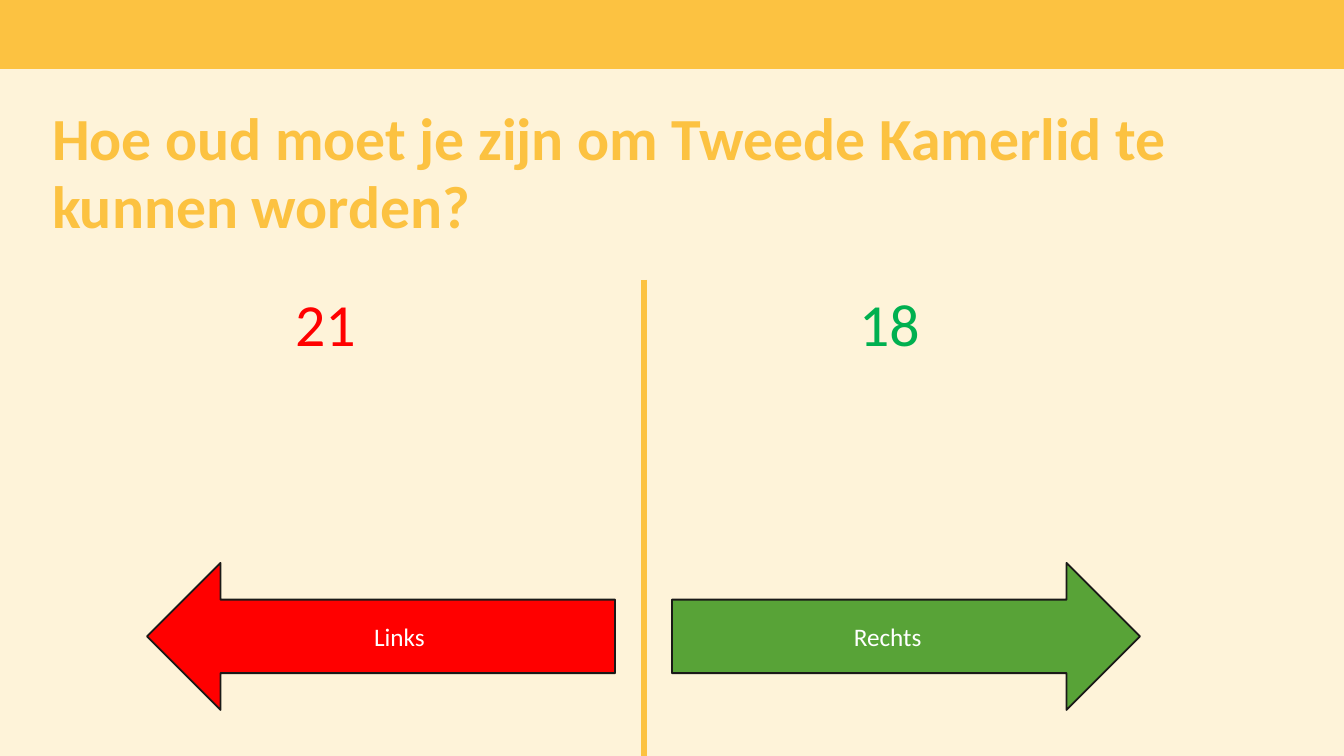
"""Build a quiz slide with a question and two answers, left and right."""
from lxml import etree
from pptx import Presentation, util as u
from pptx.dml.color import RGBColor
from pptx.enum import shapes, text
from pptx.oxml.ns import qn

PX = 914400 / 134.4
WIDTH, HEIGHT = 1344, 756
FONT = "Calibri"
CREAM = RGBColor(0xFE, 0xF3, 0xD9)
YELLOW = RGBColor(0xFC, 0xC2, 0x41)
RED = RGBColor(0xFF, 0x00, 0x00)
GREEN = RGBColor(0x00, 0xB0, 0x50)
LEAF = RGBColor(0x58, 0xA3, 0x37)
INK = RGBColor(0x1A, 0x19, 0x18)
WHITE = RGBColor(0xFF, 0xFF, 0xFF)


def px(*lengths):
    """Turn pixel lengths into EMU."""
    return [u.Emu(round(length * PX)) for length in lengths]


def write(frame, wording, size, color, bold=False, align=text.PP_ALIGN.LEFT):
    """Put one formatted paragraph in a text frame."""
    frame.text = wording
    paragraph = frame.paragraphs[0]
    paragraph.alignment = align
    for run in paragraph.runs:
        run.font.name = FONT
        run.font.size = u.Pt(size)
        run.font.bold = bold
        run.font.color.rgb = color
    return paragraph


def add_band(slide):
    """Draw the band along the top edge."""
    band = slide.shapes.add_shape(
        shapes.MSO_SHAPE.RECTANGLE, *px(0, 0, WIDTH, 69))
    band.shadow.inherit = False
    band.fill.solid()
    band.fill.fore_color.rgb = YELLOW
    band.line.fill.background()


def set_question(slide, wording):
    """Place the question in the title placeholder."""
    question = slide.shapes.title
    question.left, question.top, question.width, question.height = px(
        52, 99, 1292, 132)
    frame = question.text_frame
    frame.margin_left = frame.margin_right = frame.margin_bottom = 0
    frame.margin_top = u.Inches(0.05)
    frame.word_wrap = True
    frame.auto_size = text.MSO_AUTO_SIZE.NONE
    frame.vertical_anchor = text.MSO_ANCHOR.TOP
    write(frame, wording, 32, YELLOW, bold=True).line_spacing = u.Pt(36)


def add_divider(slide):
    """Draw the line between the two answers."""
    divider = slide.shapes.add_connector(
        shapes.MSO_CONNECTOR.STRAIGHT, *px(644, 280, 644, HEIGHT))
    divider.line.color.rgb = YELLOW
    divider.line.width = u.Pt(3)
    etree.SubElement(divider._element.spPr, qn("a:effectLst"))


def add_answer(slide, left, wording, color):
    """Write an answer at the top of its half."""
    answer = slide.shapes.add_textbox(*px(left, 280, 125, 86))
    answer.text_frame.word_wrap = True
    write(answer.text_frame, wording, 32, color)


def add_arrow(slide, direction, left, wording, color):
    """Draw a labelled arrow that points to one side."""
    arrow = slide.shapes.add_shape(direction, *px(left, 563, 468, 147))
    arrow.shadow.inherit = False
    arrow.fill.solid()
    arrow.fill.fore_color.rgb = color
    arrow.line.color.rgb = INK
    arrow.line.width = u.Pt(1)
    arrow.text_frame.vertical_anchor = text.MSO_ANCHOR.MIDDLE
    write(arrow.text_frame, wording, 13.5, WHITE, align=text.PP_ALIGN.CENTER)


def main():
    """Build and save the slide."""
    deck = Presentation()
    deck.slide_width, deck.slide_height = px(WIDTH, HEIGHT)
    slide = deck.slides.add_slide(deck.slide_layouts[5])
    slide.background.fill.solid()
    slide.background.fill.fore_color.rgb = CREAM

    add_band(slide)
    set_question(
        slide, "Hoe oud moet je zijn om Tweede Kamerlid te kunnen worden?")
    add_divider(slide)
    add_answer(slide, 282, "21", RED)
    add_answer(slide, 846, "18", GREEN)
    add_arrow(slide, shapes.MSO_SHAPE.LEFT_ARROW, 147, "Links", RED)
    add_arrow(slide, shapes.MSO_SHAPE.RIGHT_ARROW, 672, "Rechts", LEAF)
    deck.save("out.pptx")


if __name__ == "__main__":
    main()
